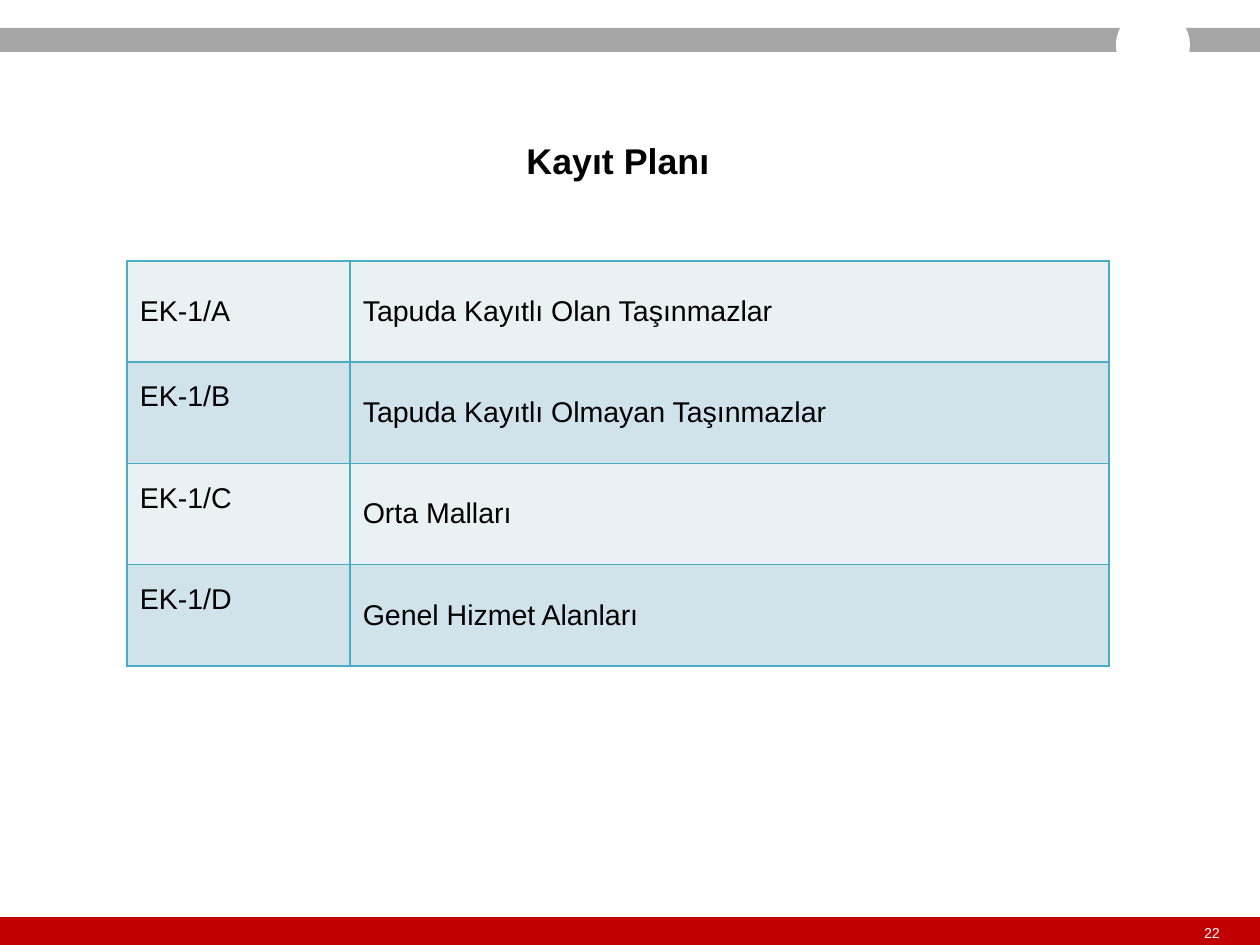
import pptx
import pptx.dml.color
import pptx.enum.shapes
import pptx.enum.text
import pptx.oxml
import pptx.oxml.ns
import pptx.util

RGBColor = pptx.dml.color.RGBColor
MSO_SHAPE = pptx.enum.shapes.MSO_SHAPE
MSO_ANCHOR = pptx.enum.text.MSO_ANCHOR
PP_ALIGN = pptx.enum.text.PP_ALIGN

BLACK = RGBColor(0, 0, 0)
WHITE = RGBColor(255, 255, 255)
GREY = RGBColor(0xA6, 0xA6, 0xA6)
RED = RGBColor(0xC0, 0, 0)
BANDS = (RGBColor(0xE9, 0xF1, 0xF5), RGBColor(0xD0, 0xE3, 0xEA))
BORDER = RGBColor(0x4B, 0xAC, 0xC6)

EMU_PER_PX = 7112
SLIDE_W, SLIDE_H = 1260, 945
ROWS = (
    ("EK-1/A", "Tapuda Kayıtlı Olan Taşınmazlar"),
    ("EK-1/B", "Tapuda Kayıtlı Olmayan Taşınmazlar"),
    ("EK-1/C", "Orta Malları"),
    ("EK-1/D", "Genel Hizmet Alanları"),
)


def px(n):
    """Convert pixels to EMU."""
    return pptx.util.Emu(n * EMU_PER_PX)


def set_text(tf, text, size, color, bold=False, align=PP_ALIGN.LEFT):
    """Write one formatted paragraph and return it."""
    p = tf.paragraphs[0]
    p.text = text
    p.alignment = align
    p.font.name = "Arial"
    p.font.size = pptx.util.Pt(size)
    p.font.bold = bold
    p.font.color.rgb = color
    return p


def add_block(slide, kind, box, color):
    """Add a plain filled shape."""
    sp = slide.shapes.add_shape(kind, *map(px, box))
    sp.shadow.inherit = False
    sp.fill.solid()
    sp.fill.fore_color.rgb = color
    sp.line.fill.background()


def add_header(slide, x, y, w, h):
    """Draw the grey bar with its round notch."""
    add_block(slide, MSO_SHAPE.RECTANGLE, (x, y, w, h), GREY)
    add_block(slide, MSO_SHAPE.OVAL, (x + w - 144, y - 20, 74, 74), WHITE)


def add_footer(slide, x, y, w, h, number):
    """Draw the red bar with the page number."""
    add_block(slide, MSO_SHAPE.RECTANGLE, (x, y, w, h), RED)
    tf = slide.shapes.add_textbox(px(x + w - 65), px(y + 7), px(34), px(18)).text_frame
    tf.margin_left = tf.margin_right = tf.margin_top = tf.margin_bottom = 0
    tf.vertical_anchor = MSO_ANCHOR.MIDDLE
    tf.word_wrap = True
    set_text(tf, number, 8, WHITE, align=PP_ALIGN.CENTER)


def place_title(slide, x, y, w, h, text):
    """Place and format the title placeholder."""
    sp = slide.shapes.title
    sp.left, sp.top, sp.width, sp.height = map(px, (x, y, w, h))
    tf = sp.text_frame
    tf.margin_left = tf.margin_right = tf.margin_top = tf.margin_bottom = px(10)
    tf.vertical_anchor = MSO_ANCHOR.MIDDLE
    tf.word_wrap = True
    p = set_text(tf, text, 20, BLACK, True, PP_ALIGN.CENTER)
    p.line_spacing = 1.5
    p.space_before = pptx.util.Pt(0)


def format_cell(cell, text, fill):
    """Fill, outline and label a table cell."""
    cell.vertical_anchor = MSO_ANCHOR.MIDDLE
    set_text(cell.text_frame, text, 16, BLACK)
    tc_pr = cell._tc.get_or_add_tcPr()
    for side in ("lnL", "lnR", "lnT", "lnB"):
        tc_pr.append(pptx.oxml.parse_xml(
            f'<a:{side} {pptx.oxml.ns.nsdecls("a")} w="12700"><a:solidFill>'
            f'<a:srgbClr val="{BORDER}"/></a:solidFill></a:{side}>'))
    cell.fill.solid()
    cell.fill.fore_color.rgb = fill


def add_plan_table(slide, x, y, w, h):
    """Add the registration plan as a banded table."""
    table = slide.shapes.add_table(len(ROWS), 2, px(x), px(y), px(w), px(h)).table
    table.first_row = table.horz_banding = False
    code_w = 223
    table.columns[0].width = px(code_w)
    table.columns[1].width = px(w - code_w)
    for i, row in enumerate(ROWS):
        for j, text in enumerate(row):
            format_cell(table.cell(i, j), text, BANDS[i % 2])
        if i > 0:
            table.cell(i, 0).margin_bottom = px(38)


def main():
    """Build the slide and save it."""
    prs = pptx.Presentation()
    prs.slide_width, prs.slide_height = px(SLIDE_W), px(SLIDE_H)
    slide = prs.slides.add_slide(prs.slide_layouts[5])
    add_header(slide, 0, 28, SLIDE_W, 24)
    add_footer(slide, 0, 917, SLIDE_W, 28, "22")
    place_title(slide, 315, 94, 606, 112, "Kayıt Planı")
    add_plan_table(slide, 127, 261, 982, 405)
    prs.save("out.pptx")


if __name__ == "__main__":
    main()
